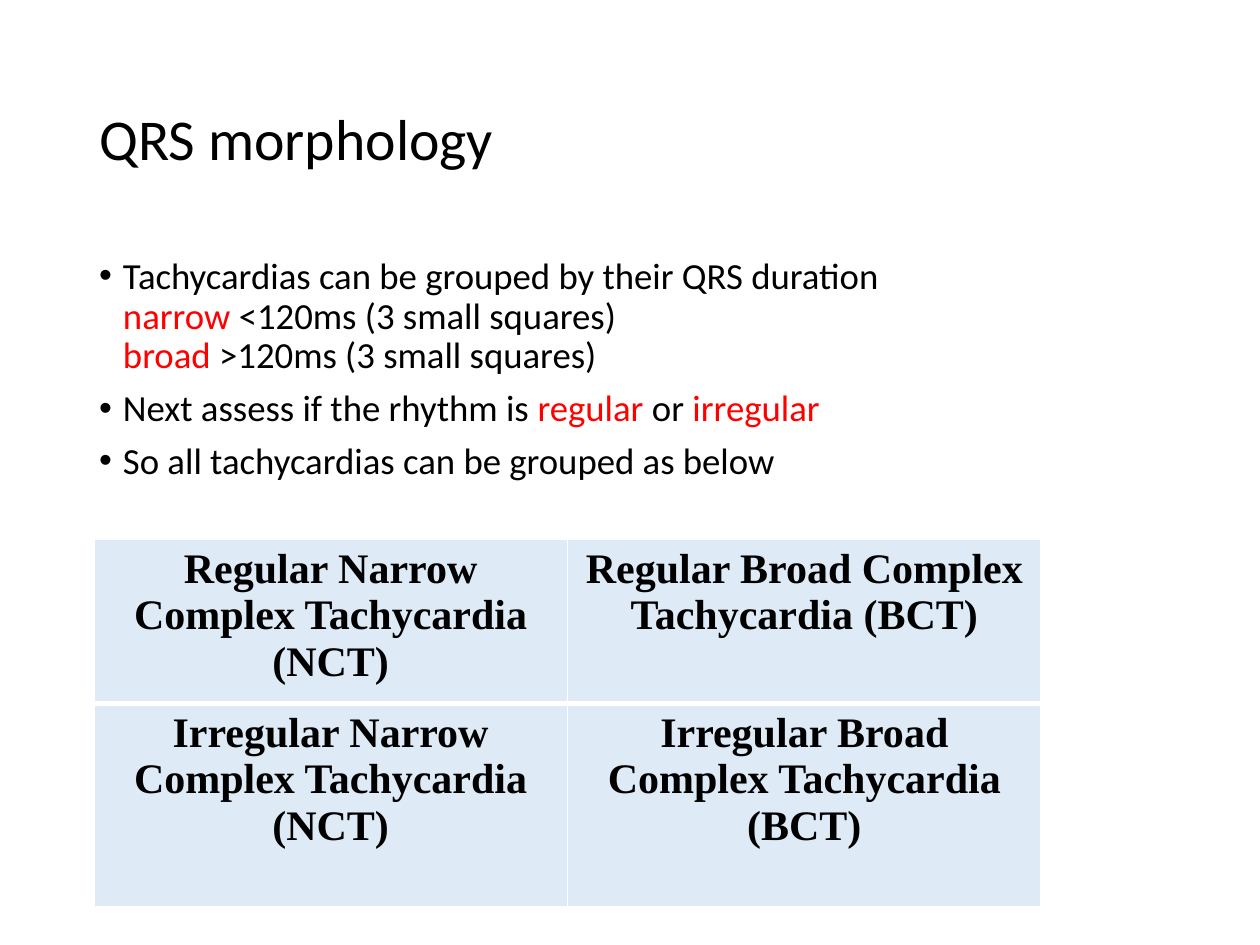
from lxml import etree
from pptx import Presentation
from pptx.dml.color import RGBColor
from pptx.enum.text import MSO_ANCHOR, MSO_AUTO_SIZE, PP_ALIGN
from pptx.oxml.ns import qn
from pptx.util import Cm, Pt

LEFT, CENTER = PP_ALIGN.LEFT, PP_ALIGN.CENTER
TOP, MIDDLE = MSO_ANCHOR.TOP, MSO_ANCHOR.MIDDLE
NO_AUTOFIT = MSO_AUTO_SIZE.NONE
TITLE_ONLY = 5

BLACK = RGBColor(0x00, 0x00, 0x00)
RED = RGBColor(0xFF, 0x00, 0x00)
WHITE = RGBColor(0xFF, 0xFF, 0xFF)
PALE_BLUE = RGBColor(0xDE, 0xEB, 0xF7)

TITLE_FONT = {"name": "Calibri", "size": Pt(33), "bold": False}
BODY_FONT = {"name": "Calibri", "size": Pt(21)}
CELL_FONT = {"name": "Times New Roman", "size": Pt(24), "bold": True}

# Each bullet is a list of lines, each line a list of (text, colour).
BULLETS = [
    [
        [("Tachycardias can be grouped by their QRS duration", BLACK)],
        [("narrow ", RED), ("<120ms (3 small squares)", BLACK)],
        [("broad ", RED), (">120ms (3 small squares)", BLACK)],
    ],
    [[("Next assess if the rhythm is ", BLACK), ("regular ", RED),
      ("or", BLACK), (" irregular", RED)]],
    [[("So all tachycardias can be grouped as below", BLACK)]],
]
GROUPS = [
    ["Regular Narrow Complex Tachycardia (NCT)",
     "Regular Broad Complex Tachycardia (BCT)"],
    ["Irregular Narrow Complex Tachycardia (NCT)",
     "Irregular Broad Complex Tachycardia (BCT)"],
]
ROW_HEIGHTS = [Cm(3.03), Cm(4.1)]


def set_values(target, values):
    for name, value in values.items():
        setattr(target, name, value)


def add_span(para, text, font, colour):
    span = para.add_run()
    span.text = text
    set_values(span.font, font)
    span.font.color.rgb = colour


def add_bullet(para, indent):
    """Give the paragraph a round bullet with a hanging indent."""
    properties = para._p.get_or_add_pPr()
    properties.set("marL", str(indent))
    properties.set("indent", str(-indent))
    etree.SubElement(properties, qn("a:buFont"), typeface="Arial")
    etree.SubElement(properties, qn("a:buChar"), char="•")


def add_border(cell, side, width):
    line = etree.SubElement(cell._tc.get_or_add_tcPr(), qn("a:" + side),
                            w=str(Pt(width)))
    fill = etree.SubElement(line, qn("a:solidFill"))
    etree.SubElement(fill, qn("a:srgbClr"), val=str(WHITE))


def place_title(page, left, top, width, height):
    title = page.shapes.title
    set_values(title, {"left": left, "top": top,
                       "width": width, "height": height})
    frame = title.text_frame
    set_values(frame, {"vertical_anchor": MIDDLE, "word_wrap": True,
                       "auto_size": NO_AUTOFIT})
    para = frame.paragraphs[0]
    set_values(para, {"alignment": LEFT, "line_spacing": 0.9})
    add_span(para, "QRS morphology", TITLE_FONT, BLACK)


def place_bullets(page, left, top, width, height):
    frame = page.shapes.add_textbox(left, top, width, height).text_frame
    set_values(frame, {"vertical_anchor": TOP, "word_wrap": True})
    for index, lines in enumerate(BULLETS):
        para = frame.add_paragraph() if index else frame.paragraphs[0]
        add_bullet(para, Cm(0.48))
        set_values(para, {"line_spacing": 0.9,
                          "space_before": Pt(7.5 if index else 0)})
        for line_number, line in enumerate(lines):
            if line_number:
                para.add_line_break()
            for text, colour in line:
                add_span(para, text, BODY_FONT, colour)


def place_groups(page, left, top, width):
    """Add the table of tachycardia groups."""
    table = page.shapes.add_table(len(GROUPS), len(GROUPS[0]), left, top,
                                  width, sum(ROW_HEIGHTS)).table
    for row_number, texts in enumerate(GROUPS):
        table.rows[row_number].height = ROW_HEIGHTS[row_number]
        for column_number, text in enumerate(texts):
            cell = table.cell(row_number, column_number)
            for side in ("lnL", "lnR", "lnT", "lnB"):
                inner = side == ("lnT" if row_number else "lnB")
                add_border(cell, side, 3 if inner else 1)
            cell.fill.solid()
            cell.fill.fore_color.rgb = PALE_BLUE
            para = cell.text_frame.paragraphs[0]
            para.alignment = CENTER
            add_span(para, text, CELL_FONT, BLACK)


def main():
    deck = Presentation()
    set_values(deck, {"slide_width": Cm(25.4), "slide_height": Cm(19.05)})
    page = deck.slides.add_slide(deck.slide_layouts[TITLE_ONLY])
    place_title(page, Cm(1.75), Cm(1.01), Cm(21.9), Cm(3.68))
    place_bullets(page, Cm(1.75), Cm(5.07), Cm(21.9), Cm(12.09))
    place_groups(page, Cm(1.89), Cm(10.88), Cm(19.1))
    deck.save("out.pptx")


if __name__ == "__main__":
    main()
